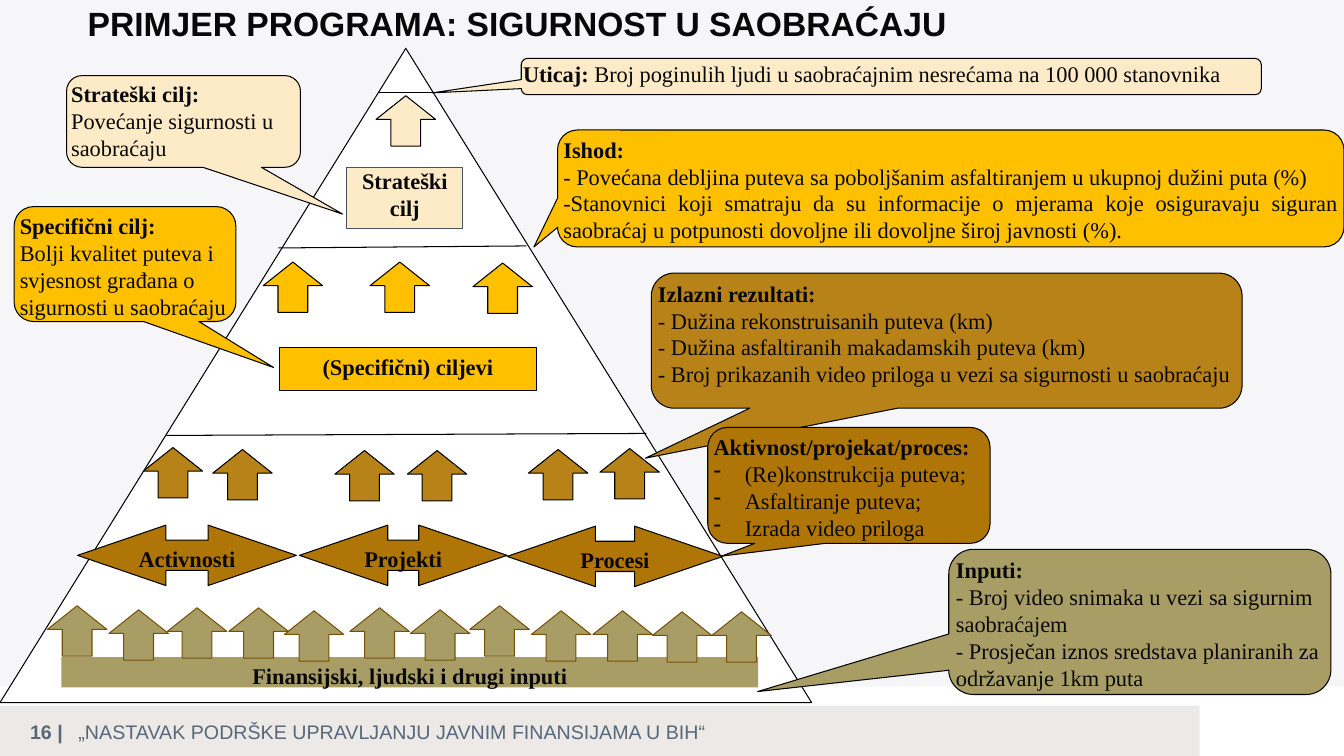
"""Build the road safety programme pyramid slide."""
from lxml import etree
from pptx import Presentation
from pptx.dml.color import RGBColor
from pptx.enum.shapes import MSO_CONNECTOR, MSO_SHAPE
from pptx.enum.text import MSO_ANCHOR, MSO_AUTO_SIZE, PP_ALIGN
from pptx.oxml.ns import qn
from pptx.util import Inches, Pt

RECT, PEAK = MSO_SHAPE.RECTANGLE, MSO_SHAPE.ISOSCELES_TRIANGLE
UP, BOTH = MSO_SHAPE.UP_ARROW, MSO_SHAPE.LEFT_RIGHT_ARROW
CALL = MSO_SHAPE.ROUNDED_RECTANGULAR_CALLOUT
LEFT, MID, JUST = PP_ALIGN.LEFT, PP_ALIGN.CENTER, PP_ALIGN.JUSTIFY
TOP, CENTER, BOTTOM = MSO_ANCHOR.TOP, MSO_ANCHOR.MIDDLE, MSO_ANCHOR.BOTTOM
SERIF, SANS = "Times New Roman", "Arial"
INK, BLACK, SLATE = "080808", "000000", "56687B"
CREAM, GOLD, OCHRE, BROWN, OLIVE = "FDEBC7", "FFC000", "B78217", "AF7607", "A89E65"

TITLE = "PRIMJER PROGRAMA: SIGURNOST U SAOBRAĆAJU"
FOOTER = [
    ("„NASTAVAK PODRŠKE UPRAVLJANJU JAVNIM FINANSIJAMA U BIH“",
     (0.68, 7.09, 10.39, 0.33), False),
    ("16 |", (0.2, 7.07, 0.71, 0.37), True),
]
PANELS = [((0, 7, 11.9, 0.5), "EDE9E6"), ((0, 0, 13.33, 6.81), "F6F6F8")]
PYRAMID = (0, 0.48, 8.05, 6.49)
TIERS = [(3.76, 0.92, 4.33, 0.92), (2.76, 2.46, 5.22, 2.44), (1.65, 4.32, 6.41, 4.3)]
BARS = [
    (["Finansijski, ljudski i drugi inputi"], (0.61, 6.52, 6.91, 0.3), OLIVE, None, 0.05),
    (["(Specifični) ciljevi"], (2.77, 3.45, 2.55, 0.42), GOLD, BLACK, 0.05),
    (["Strateški", "cilj"], (3.44, 1.66, 1.15, 0.61), CREAM, "455560", 0),
]
WORK = [("Activnosti", 0.77, 5.21, 2.17), ("Projekti", 2.97, 5.21, 2.06),
        ("Procesi", 5.03, 5.22, 2.14)]
ARROWS = [
    (CREAM, BLACK, [(3.73, 0.95)]),
    (GOLD, BLACK, [(2.61, 2.6), (3.67, 2.6), (4.69, 2.61)]),
    (OCHRE, BLACK, [(1.42, 4.44), (2.11, 4.46), (3.32, 4.47), (4.04, 4.47),
                    (5.24, 4.46), (5.95, 4.45)]),
    (OLIVE, "785106", [(0.47, 6.01), (1.66, 6.03), (1.08, 6.05), (2.27, 6.03),
                       (2.82, 6.06), (3.47, 6.03), (4.66, 6.01), (4.07, 6.05),
                       (5.27, 6.06), (5.88, 6.06), (6.47, 6.07), (7.06, 6.07)]),
]
CALLOUTS = [
    ("Inputi:", [
        "- Broj video snimaka u vezi sa sigurnim saobraćajem",
        "- Prosječan iznos sredstava planiranih za održavanje 1km puta",
    ], (9.41, 5.45, 3.79, 1.44), (-1, 0.48), OLIVE, "plain"),
    ("Izlazni rezultati:", [
        "- Dužina rekonstruisanih puteva (km)",
        "- Dužina asfaltiranih makadamskih puteva (km)",
        "- Broj prikazanih video priloga u vezi sa sigurnosti u saobraćaju",
    ], (6.46, 2.71, 5.86, 1.34), (-0.51, 0.87), OCHRE, "plain"),
    ("Ishod:", [
        "- Povećana debljina puteva sa poboljšanim asfaltiranjem u ukupnoj dužini puta (%)",
        "-Stanovnici koji smatraju da su informacije o mjerama koje osiguravaju siguran "
        "saobraćaj u potpunosti dovoljne ili dovoljne široj javnosti (%).",
    ], (5.53, 1.29, 7.8, 1.16), (-0.53, 0.5), GOLD, "justify"),
    ("Uticaj: ", [
        "Broj poginulih ljudi u saobraćajnim nesrećama na 100 000 stanovnika",
    ], (5.17, 0.58, 7.34, 0.36), (-0.62, 0.45), CREAM, "inline"),
    ("Aktivnost/projekat/proces:", [
        "(Re)konstrukcija puteva;", "Asfaltiranje puteva;", "Izrada video priloga",
    ], (7.02, 4.24, 2.8, 1.15), (-0.45, 0.61), BROWN, "bullet"),
    ("Strateški cilj:", ["Povećanje sigurnosti u saobraćaju"],
     (0.66, 0.75, 2.32, 0.91), (0.68, 1.01), CREAM, "plain"),
    ("Specifični cilj:", ["Bolji kvalitet puteva i svjesnost građana o sigurnosti u saobraćaju"],
     (0.14, 2.05, 2.2, 1.14), (0.67, 0.9), GOLD, "plain"),
]


def tint(code):
    """Turn a hex string into a colour."""
    return RGBColor.from_string(code)


def style(font, size, name, code, bold):
    """Format a font."""
    font.size, font.name, font.bold = Pt(size), name, bold
    font.color.rgb = tint(code)


def add(tree, kind, box, fill, edge=None, adj=()):
    """Draw one filled shape with an optional outline."""
    shape = tree.add_shape(kind, *map(Inches, box))
    shape.shadow.inherit = False
    shape.fill.solid()
    shape.fill.fore_color.rgb = tint(fill)
    if edge:
        shape.line.color.rgb = tint(edge)
        shape.line.width = Pt(0.75)
    else:
        shape.line.fill.background()
    for spot, value in enumerate(adj):
        shape.adjustments[spot] = value
    return shape


def frame(shape, side, edge, anchor):
    """Set the margins and anchor of a text frame."""
    text = shape.text_frame
    text.word_wrap, text.vertical_anchor = True, anchor
    text.auto_size = MSO_AUTO_SIZE.NONE
    text.margin_left = text.margin_right = Inches(side)
    text.margin_top = text.margin_bottom = Inches(edge)
    return text


def label(shape, lines, edge=0.05):
    """Write centred bold lines in a shape."""
    text = frame(shape, edge * 2, edge, TOP)
    text.text = "\n".join(lines)
    for para in text.paragraphs:
        para.alignment = MID
        style(para.runs[0].font, 16, SERIF, INK, True)


def dash(para):
    """Give a paragraph a hanging dash bullet."""
    props = para._p.get_or_add_pPr()
    props.set("marL", str(Inches(0.31)))
    props.set("indent", str(-Inches(0.31)))
    etree.SubElement(props, qn("a:buChar")).set("char", "-")


def note(tree, head, items, box, tip, fill, mode):
    """Draw a callout with a bold head and plain lines."""
    shape = add(tree, CALL, box, fill, BLACK, (*tip, 0.17))
    text = frame(shape, 0, 0, TOP)
    first = text.paragraphs[0]
    runs = [first.add_run()]
    for item in items:
        para = first if mode == "inline" else text.add_paragraph()
        para.alignment = JUST if mode == "justify" else LEFT
        runs.append(para.add_run())
        if mode == "bullet":
            dash(para)
    first.alignment = LEFT
    for run, words in zip(runs, [head, *items]):
        run.text = words
        style(run.font, 16, SERIF, INK, words == head)


def rule(tree, ends):
    """Draw a thin tier line."""
    line = tree.add_connector(MSO_CONNECTOR.STRAIGHT, *map(Inches, ends))
    line.line.color.rgb = tint(BLACK)
    line.line.width = Pt(0.75)
    etree.SubElement(line._element.spPr, qn("a:effectLst"))


def main():
    """Build and save the slide."""
    deck = Presentation()
    deck.slide_width, deck.slide_height = Inches(13.33), Inches(7.5)
    slide = deck.slides.add_slide(deck.slide_layouts[5])
    tree = slide.shapes
    for box, fill in PANELS:
        add(tree, RECT, box, fill)
    for words, box, bold in FOOTER:
        text = frame(tree.add_textbox(*map(Inches, box)), 0.1, 0.05, CENTER)
        text.text = words
        style(text.paragraphs[0].runs[0].font, 14, SANS, SLATE, bold)
    add(tree, PEAK, PYRAMID, "FFFFFF", BLACK)
    for ends in TIERS:
        rule(tree, ends)
    for lines, box, fill, edge, pad in BARS:
        label(add(tree, RECT, box, fill, edge), lines, pad)
    for word, left, top, width in WORK:
        label(add(tree, BOTH, (left, top, width, 0.6), BROWN, BLACK, (0.5, 1.46)), [word])
    for item in CALLOUTS:
        note(tree, *item)
    for fill, edge, spots in ARROWS:
        for left, top in spots:
            add(tree, UP, (left, top, 0.59, 0.5), fill, edge, (0.5, 0.47))
    title = tree.title
    title.left, title.top, title.width, title.height = map(Inches, (0.77, -0.12, 11.5, 0.6))
    text = frame(title, 0.1, 0.05, BOTTOM)
    text.text = TITLE
    text.paragraphs[0].alignment = LEFT
    style(text.paragraphs[0].runs[0].font, 24, SANS, INK, True)
    title.element.getparent().append(title.element)
    deck.save("out.pptx")


if __name__ == "__main__":
    main()
